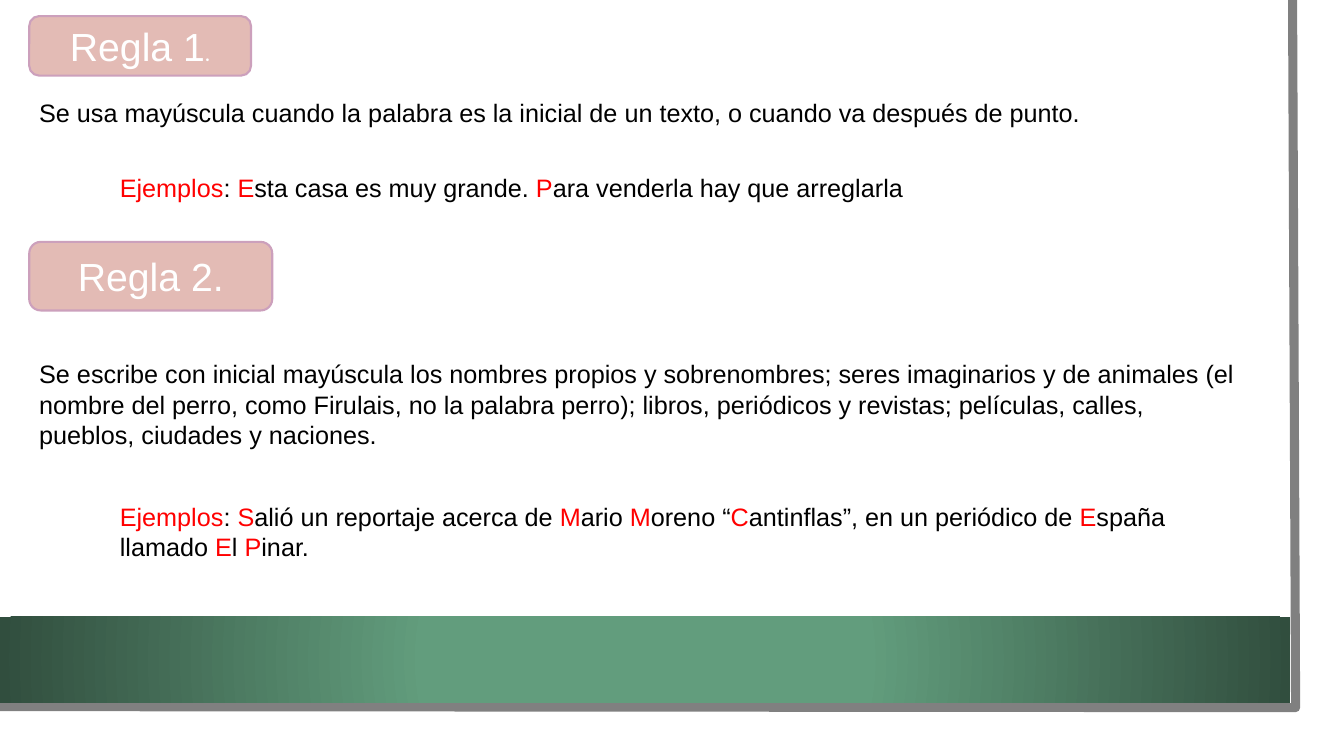
from lxml import etree
from pptx import Presentation
from pptx.dml.color import RGBColor
from pptx.enum.shapes import MSO_SHAPE
from pptx.enum.text import MSO_ANCHOR, PP_ALIGN
from pptx.oxml import parse_xml
from pptx.oxml.ns import nsdecls, qn
from pptx.util import Inches, Pt

RECTANGLE, ROUNDED = MSO_SHAPE.RECTANGLE, MSO_SHAPE.ROUNDED_RECTANGLE
MIDDLE, CENTER = MSO_ANCHOR.MIDDLE, PP_ALIGN.CENTER

WHITE = RGBColor(0xFF, 0xFF, 0xFF)
BLACK = RGBColor(0x00, 0x00, 0x00)
RED = RGBColor(0xFF, 0x00, 0x00)
GRAY = RGBColor(0x80, 0x80, 0x80)
PINK = RGBColor(0xE3, 0xBB, 0xB5)
MAUVE = RGBColor(0xCC, 0xA0, 0xBC)
GREEN = RGBColor(0x62, 0x9D, 0x7D)
DARK_GREEN = RGBColor(0x31, 0x4E, 0x3E)

# Content: boxes are left, top, width, height in inches; *stars* mark red text
LABEL_FORMAT = {"size": Pt(28), "name": "Arial"}
SMALL_FORMAT = {"size": Pt(18), "name": "Montserrat"}
TEXT_FORMAT = {"size": Pt(18), "name": "Arial"}

LABELS = [
    ((0.29, 0.16, 2.2, 0.59), [("Regla 1", LABEL_FORMAT), (".", SMALL_FORMAT)]),
    ((0.29, 2.4, 2.41, 0.68), [("Regla 2.", LABEL_FORMAT)]),
]
TEXTS = [
    ((0.29, 0.92, 11.67, 0.4),
     "Se usa mayúscula cuando la palabra es la inicial de un texto, "
     "o cuando va después de punto."),
    ((1.09, 1.66, 9.28, 0.4),
     "*Ejemplos*: *E*sta casa es muy grande. *P*ara venderla hay que arreglarla"),
    ((0.29, 3.51, 12.09, 1.01),
     "Se escribe con inicial mayúscula los nombres propios y sobrenombres; "
     "seres imaginarios y de animales (el nombre del perro, como Firulais, "
     "no la palabra perro); libros, periódicos y revistas; películas, calles, "
     "pueblos, ciudades y naciones."),
    ((1.09, 4.92, 10.62, 0.71),
     "*Ejemplos*: *S*alió un reportaje acerca de *M*ario *M*oreno “*C*antinflas”, "
     "en un periódico de *E*spaña llamado *E*l *P*inar."),
]
FRAME_POINTS = [(12.82, 0), (12.85, 7.02), (-0.03, 7.01)]


def add_run(paragraph, text, color, font_format):
    run = paragraph.add_run()
    run.text = text
    run.font.color.rgb = color
    for attribute, value in font_format.items():
        setattr(run.font, attribute, value)


def add_panel(slide, kind, box):
    shape = slide.shapes.add_shape(kind, *map(Inches, box))
    shape.shadow.inherit = False
    shape.line.fill.background()
    return shape


def add_background(slide):
    # White sheet
    sheet = add_panel(slide, RECTANGLE, (0, 0, 13.1, 7.27))
    sheet.fill.solid()
    sheet.fill.fore_color.rgb = WHITE

    # Gray edge on the right and bottom
    start, *others = [tuple(map(Inches, point)) for point in FRAME_POINTS]
    builder = slide.shapes.build_freeform(*start)
    builder.add_line_segments(others, close=False)
    edge = builder.convert_to_shape()
    edge.shadow.inherit = False
    edge.fill.background()
    edge.line.color.rgb = GRAY
    edge.line.width = Pt(6.5)

    # Green band with a radial gradient
    band = add_panel(slide, RECTANGLE, (0, 6.12, 12.8, 0.85))
    band.fill.gradient()
    stops = zip(band.fill.gradient_stops, [(0.34, GREEN), (1, DARK_GREEN)])
    for stop, (position, color) in stops:
        stop.position = position
        stop.color.rgb = color
    gradient = band.element.spPr.find(qn("a:gradFill"))
    gradient.remove(gradient.find(qn("a:lin")))
    radial = parse_xml(f'<a:path {nsdecls("a")} path="circle"/>')
    etree.SubElement(radial, qn("a:fillToRect"),
                     dict.fromkeys("ltrb", "50000"))
    gradient.find(qn("a:gsLst")).addnext(radial)


def add_label(slide, box, runs):
    label = add_panel(slide, ROUNDED, box)
    label.fill.solid()
    label.fill.fore_color.rgb = PINK
    label.line.color.rgb = MAUVE
    label.line.width = Pt(1.5)
    label.text_frame.vertical_anchor = MIDDLE
    paragraph = label.text_frame.paragraphs[0]
    paragraph.alignment = CENTER
    for text, font_format in runs:
        add_run(paragraph, text, WHITE, font_format)


def add_text(slide, box, text):
    frame = slide.shapes.add_textbox(*map(Inches, box)).text_frame
    frame.word_wrap = True
    for index, part in enumerate(text.split("*")):
        if part:
            color = RED if index % 2 else BLACK
            add_run(frame.paragraphs[0], part, color, TEXT_FORMAT)


def main():
    presentation = Presentation()
    presentation.slide_width = Inches(13.33)
    presentation.slide_height = Inches(7.5)
    slide = presentation.slides.add_slide(presentation.slide_layouts[6])
    add_background(slide)
    for box, runs in LABELS:
        add_label(slide, box, runs)
    for box, text in TEXTS:
        add_text(slide, box, text)
    presentation.save("out.pptx")


if __name__ == "__main__":
    main()
